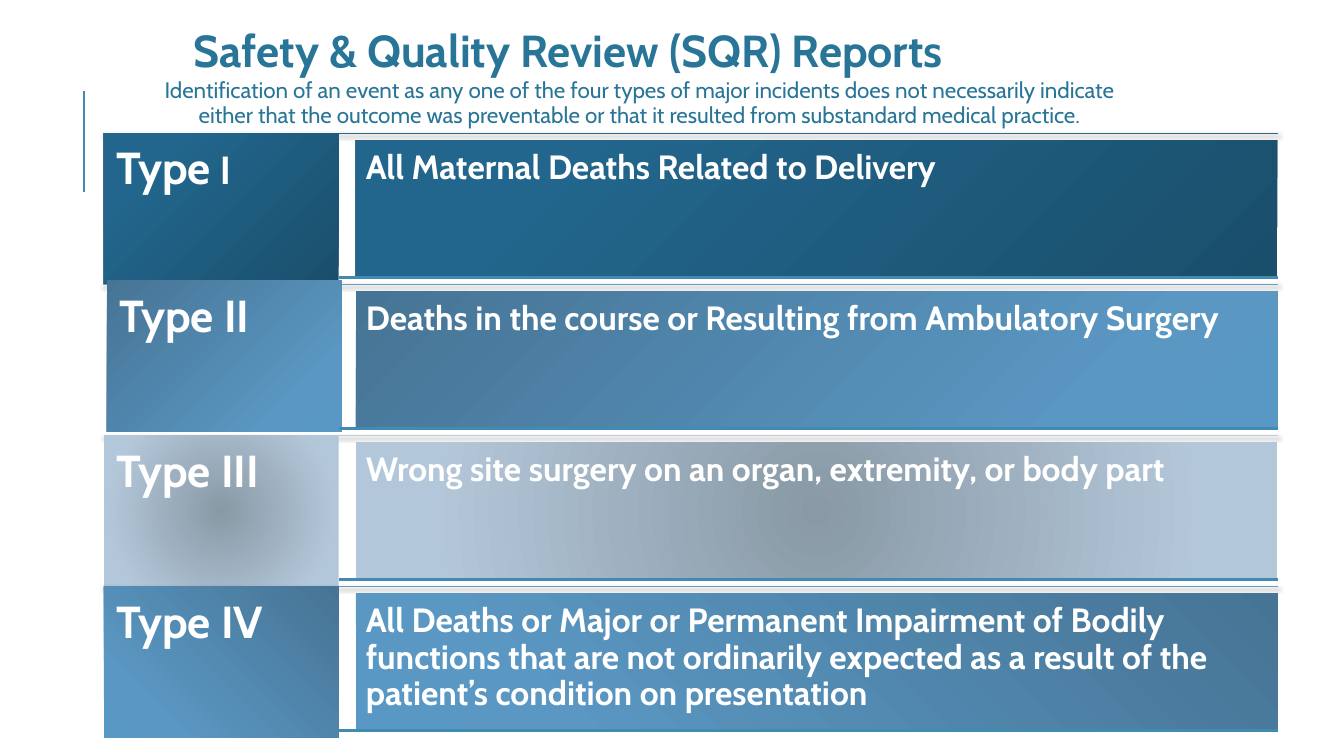
from typing import NamedTuple, Optional

from lxml import etree
from pptx import Presentation
from pptx import util as u
from pptx.dml.color import RGBColor
from pptx.enum import shapes, text
from pptx.oxml import ns

FONT = "Cabin"
TEAL = RGBColor(0x28, 0x75, 0x98)
RULE_BLUE = RGBColor(0x41, 0x8A, 0xB3)
DARK_RULE = RGBColor(0x30, 0x66, 0x84)
MID_RULE = RGBColor(0x6A, 0x9A, 0xBC)
PALE_RULE = RGBColor(0xBC, 0xCC, 0xDA)
WHITE = RGBColor(0xFF, 0xFF, 0xFF)

# Gradient colours at 0, 80 and 100 percent
STOPS = (0, 80, 100)
DARK = (RGBColor(0x1A, 0x4F, 0x6C), RGBColor(0x22, 0x66, 0x8D), RGBColor(0x20, 0x67, 0x8F))
MID = (RGBColor(0x46, 0x74, 0x95), RGBColor(0x5A, 0x97, 0xC2), RGBColor(0x59, 0x98, 0xC5))
PALE = (RGBColor(0x89, 0x99, 0xA6), RGBColor(0xB2, 0xC6, 0xD8), RGBColor(0xB2, 0xC7, 0xDA))

# Row geometry in inches
ROW_TOP, ROW_PITCH = 1.32, 1.5
LABEL_LEFT, LABEL_WIDTH = 1.03, 2.33
DETAIL_LEFT, DETAIL_WIDTH, DETAIL_HEIGHT = 3.53, 9.14, 1.36
DETAIL_OFFSET, ROW_RIGHT = 0.07, 12.68


class Gradient(NamedTuple):
    colors: tuple[RGBColor, ...]
    angle: Optional[int] = None  # clockwise degrees of a linear gradient
    center: tuple[int, int] = (50, 50)  # percent across and down, when circular


class IncidentType(NamedTuple):
    label: str
    numeral: str
    detail: str
    gradient: Gradient
    rule_color: RGBColor
    numeral_size: int = 32
    label_shift: tuple[float, float] = (0, 0)


INCIDENT_TYPES = [
    IncidentType("Type", " I", "All Maternal Deaths Related to Delivery",
                 Gradient(DARK, angle=225), DARK_RULE, numeral_size=28),
    IncidentType("Type", " II", "Deaths in the course or Resulting from Ambulatory Surgery",
                 Gradient(MID, angle=45), MID_RULE, label_shift=(0.03, -0.04)),
    IncidentType("Type", " III", "Wrong site surgery on an organ, extremity, or body part",
                 Gradient(PALE), PALE_RULE),
    IncidentType("Type", " IV",
                 "All Deaths or Major or Permanent Impairment of Bodily functions that are not "
                 "ordinarily expected as a result of the patient’s condition on presentation",
                 Gradient(MID, center=(100, 0)), MID_RULE),
]


def add_element(parent, tag: str, **attributes):
    return etree.SubElement(parent, ns.qn(tag),
                            {name: str(value) for name, value in attributes.items()})


def apply_gradient(shape, gradient: Gradient) -> None:
    properties = shape._element.spPr
    fill = etree.Element(ns.qn("a:gradFill"), rotWithShape="1")
    stops = add_element(fill, "a:gsLst")
    for position, color in zip(STOPS, gradient.colors):
        stop = add_element(stops, "a:gs", pos=position * 1000)
        add_element(stop, "a:srgbClr", val=color)
    if gradient.angle is not None:
        add_element(fill, "a:lin", ang=gradient.angle * 60000, scaled=0)
    else:
        across, down = (percent * 1000 for percent in gradient.center)
        circle = add_element(fill, "a:path", path="circle")
        add_element(circle, "a:fillToRect", l=across, t=down,
                    r=100000 - across, b=100000 - down)
    properties.find(ns.qn("a:prstGeom")).addnext(fill)


def add_line(slide, start: tuple[float, float], end: tuple[float, float],
             color: RGBColor, width: float, shadow: bool = False) -> None:
    line = slide.shapes.add_connector(shapes.MSO_CONNECTOR.STRAIGHT,
                                      *(u.Inches(value) for value in start + end))
    line.line.color.rgb = color
    line.line.width = u.Pt(width)
    effects = add_element(line._element.spPr, "a:effectLst")
    if shadow:
        outer = add_element(effects, "a:outerShdw", blurRad=u.Pt(3.1), dist=u.Pt(1.8),
                            dir=90 * 60000, rotWithShape=0)
        add_element(add_element(outer, "a:srgbClr", val="000000"), "a:alpha", val=35000)


def write_text(shape, *runs: tuple[str, float], color: RGBColor = WHITE, bold: bool = True,
               insets: tuple[float, float, float, float] = (0.1, 0.05, 0.1, 0.05),
               align=text.PP_ALIGN.LEFT, line_spacing: float = 0.9) -> None:
    """Fill a shape with one paragraph of (text, size) runs."""
    frame = shape.text_frame
    frame.word_wrap = True
    frame.vertical_anchor = text.MSO_ANCHOR.TOP
    (frame.margin_left, frame.margin_top,
     frame.margin_right, frame.margin_bottom) = map(u.Inches, insets)
    paragraph = frame.paragraphs[0]
    paragraph.alignment = align
    paragraph.line_spacing = line_spacing
    for content, size in runs:
        run = paragraph.add_run()
        run.text = content
        run.font.name = FONT
        run.font.size = u.Pt(size)
        run.font.bold = bold
        run.font.color.rgb = color


def add_text_box(slide, left: float, top: float, width: float, height: float):
    return slide.shapes.add_textbox(*map(u.Inches, (left, top, width, height)))


def add_panel(slide, left: float, top: float, width: float, height: float,
              gradient: Gradient):
    panel = slide.shapes.add_shape(shapes.MSO_SHAPE.RECTANGLE,
                                   *map(u.Inches, (left, top, width, height)))
    panel.shadow.inherit = False
    panel.line.fill.background()
    apply_gradient(panel, gradient)
    return panel


def add_incident_row(slide, incident: IncidentType, top: float) -> None:
    add_line(slide, (LABEL_LEFT, top), (ROW_RIGHT, top), incident.rule_color, 0.75, shadow=True)

    shift_x, shift_y = incident.label_shift
    label = add_panel(slide, LABEL_LEFT + shift_x, top + shift_y, LABEL_WIDTH, ROW_PITCH,
                      incident.gradient)
    write_text(label, (incident.label, 32), (incident.numeral, incident.numeral_size),
               insets=(0.13,) * 4)

    detail_top = top + DETAIL_OFFSET
    detail = add_panel(slide, DETAIL_LEFT, detail_top, DETAIL_WIDTH, DETAIL_HEIGHT,
                       incident.gradient)
    write_text(detail, (incident.detail, 24), insets=(0.1,) * 4)

    bottom = detail_top + DETAIL_HEIGHT
    add_line(slide, (LABEL_LEFT + LABEL_WIDTH, bottom), (ROW_RIGHT, bottom), RULE_BLUE, 2)


def main() -> None:
    presentation = Presentation()
    presentation.slide_width = u.Inches(13.33)
    presentation.slide_height = u.Inches(7.5)
    slide = presentation.slides.add_slide(presentation.slide_layouts[6])

    # Accent line, introduction and title
    add_line(slide, (0.83, 1.9), (0.83, 0.9), RULE_BLUE, 1.5)
    introduction = add_text_box(slide, 1.13, 0.74, 10.03, 0.58)
    write_text(introduction,
               ("Identification of an event as any one of the four types of major incidents "
                "does not necessarily indicate either that the outcome was preventable or "
                "that it resulted from substandard medical practice.", 16),
               color=TEAL, bold=False, insets=(0.45, 0.05, 0.05, 0.05),
               align=text.PP_ALIGN.CENTER)
    title = add_text_box(slide, 1.82, 0.18, 9.04, 0.91)
    write_text(title, ("Safety & Quality Review (SQR) Reports", 32), color=TEAL, line_spacing=1.0)

    # Incident types, one row each
    for index, incident in enumerate(INCIDENT_TYPES):
        add_incident_row(slide, incident, ROW_TOP + index * ROW_PITCH)

    presentation.save("out.pptx")


if __name__ == "__main__":
    main()
